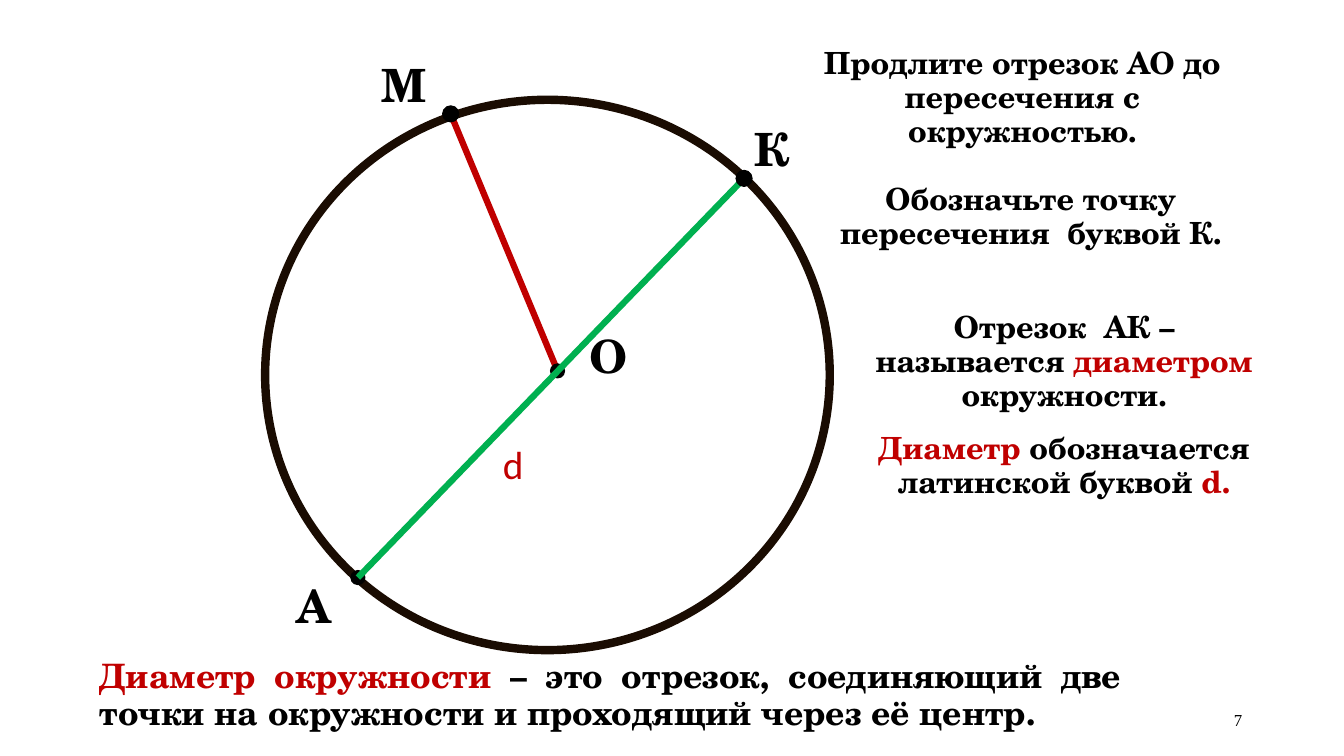
from dataclasses import dataclass

from lxml.etree import SubElement
from pptx import Presentation
from pptx.dml.color import RGBColor
from pptx.enum.shapes import MSO_CONNECTOR, MSO_SHAPE
from pptx.enum.text import MSO_ANCHOR, MSO_AUTO_SIZE, PP_ALIGN
from pptx.oxml.ns import qn
from pptx.util import Inches, Pt


@dataclass(frozen=True)
class Theme:
    black: str = "000000"
    red: str = "C00000"
    green: str = "00B050"
    ring: str = "1A0C02"
    serif: str = "TeX Gyre Schola"
    sans: str = "Calibri"
    number: str = "Times New Roman"
    label_pt: float = 32.7
    symbol_pt: float = 28
    rule_pt: float = 24
    body_pt: float = 21.8
    number_pt: float = 12
    segment_pt: float = 4.5
    ring_pt: float = 6
    dot_pt: float = 0.75


T = Theme()


def add_text(s, box, runs, size=T.body_pt, font=T.serif, bold=True,
             align=PP_ALIGN.CENTER, spacing=0.93, anchor=MSO_ANCHOR.TOP,
             fit=MSO_AUTO_SIZE.SHAPE_TO_FIT_TEXT):
    """Place one paragraph; runs is a list of (text, colour)."""
    tf = s.shapes.add_textbox(*map(Inches, box)).text_frame
    tf.word_wrap = True
    tf.auto_size = fit
    tf.vertical_anchor = anchor
    p = tf.paragraphs[0]
    p.alignment = align
    p.line_spacing = spacing
    for text, colour in runs:
        r = p.add_run()
        r.text = text
        r.font.name = font
        r.font.size = Pt(size)
        r.font.bold = bold
        r.font.color.rgb = RGBColor.from_string(colour)


def add_circle(s, box, line, width, fill=None):
    sp = s.shapes.add_shape(MSO_SHAPE.OVAL, *map(Inches, box))
    sp.shadow.inherit = False
    if fill:
        sp.fill.solid()
        sp.fill.fore_color.rgb = RGBColor.from_string(fill)
    else:
        sp.fill.background()
    sp.line.color.rgb = RGBColor.from_string(line)
    sp.line.width = Pt(width)


def add_dot(s, centre, radius):
    x, y = centre
    add_circle(s, (x - radius, y - radius, 2 * radius, 2 * radius),
               T.black, T.dot_pt, fill=T.black)


def add_segment(s, start, end, colour):
    c = s.shapes.add_connector(MSO_CONNECTOR.STRAIGHT,
                               *map(Inches, (*start, *end)))
    c.line.color.rgb = RGBColor.from_string(colour)
    c.line.width = Pt(T.segment_pt)
    SubElement(c._element.spPr, qn("a:effectLst"))


def draw_circle_diagram(s, box):
    left, top, width, height = box

    def at(dx, dy):
        return left + dx, top + dy

    m, o, a, k = at(1.84, 0.14), at(2.9, 2.69), at(0.92, 4.74), at(4.75, 0.78)

    # Radius, circle and diameter, with the points in stacking order
    add_segment(s, o, m, T.red)
    add_dot(s, o, 0.07)
    add_circle(s, box, T.ring, T.ring_pt)
    add_dot(s, m, 0.08)
    add_dot(s, a, 0.07)
    add_segment(s, k, a, T.green)
    add_dot(s, k, 0.08)

    # Point letters, each offset from its point
    for letter, (x, y), dx, dy, w in (("М", m, -0.78, -0.57, 0.63),
                                      ("А", a, -0.71, 0, 0.55),
                                      ("О", o, 0.22, -0.43, 0.47),
                                      ("К", k, 0, -0.57, 0.55)):
        add_text(s, (x + dx, y + dy, w, 0.61), [(letter, T.black)],
                 size=T.label_pt)

    # Diameter symbol
    add_text(s, (*at(2.26, 3.33), 0.45, 0.57), [("d", T.red)],
             size=T.symbol_pt, font=T.sans, bold=False,
             align=PP_ALIGN.LEFT, spacing=1.0)


def draw_instructions(s, box):
    left, top, width, _ = box
    # Left offset, top offset, width, height, runs
    steps = (
        (0, 0, 4.68, 1.12,
         [("Продлите отрезок АО до пересечения с окружностью.", T.black)]),
        (0.36, 1.35, 4.13, 0.78,
         [("Обозначьте точку пересечения  буквой К.", T.black)]),
        (0.64, 2.62, width - 0.64, 1.12,
         [("Отрезок  АК – называется ", T.black), ("диаметром", T.red),
          (" окружности.", T.black)]),
        (0.64, 3.82, width - 0.64, 0.78,
         [("Диаметр ", T.red), ("обозначается латинской буквой ", T.black),
          ("d.", T.red)]),
    )
    for dx, dy, w, h, runs in steps:
        add_text(s, (left + dx, top + dy, w, h), runs)


def draw_definition(s, box):
    add_text(s, box,
             [("Диаметр окружности ", T.red),
              ("– это отрезок, соединяющий две точки на окружности "
               "и проходящий через её центр.", T.black)],
             size=T.rule_pt, align=PP_ALIGN.JUSTIFY)


def draw_slide_number(s, box):
    add_text(s, box, [("7", T.black)], size=T.number_pt, font=T.number,
             bold=False, align=PP_ALIGN.RIGHT, spacing=0.95,
             anchor=MSO_ANCHOR.MIDDLE, fit=MSO_AUTO_SIZE.NONE)


def main():
    prs = Presentation()
    prs.slide_width, prs.slide_height = Inches(13.33), Inches(7.5)
    s = prs.slides.add_slide(prs.slide_layouts[6])
    draw_circle_diagram(s, (2.63, 0.99, 5.6, 5.46))
    draw_instructions(s, (7.8, 0.42, 4.87, 4.6))
    draw_definition(s, (0.89, 6.48, 10.33, 0.85))
    draw_slide_number(s, (9.42, 6.95, 3, 0.4))
    prs.save("out.pptx")


if __name__ == "__main__":
    main()
